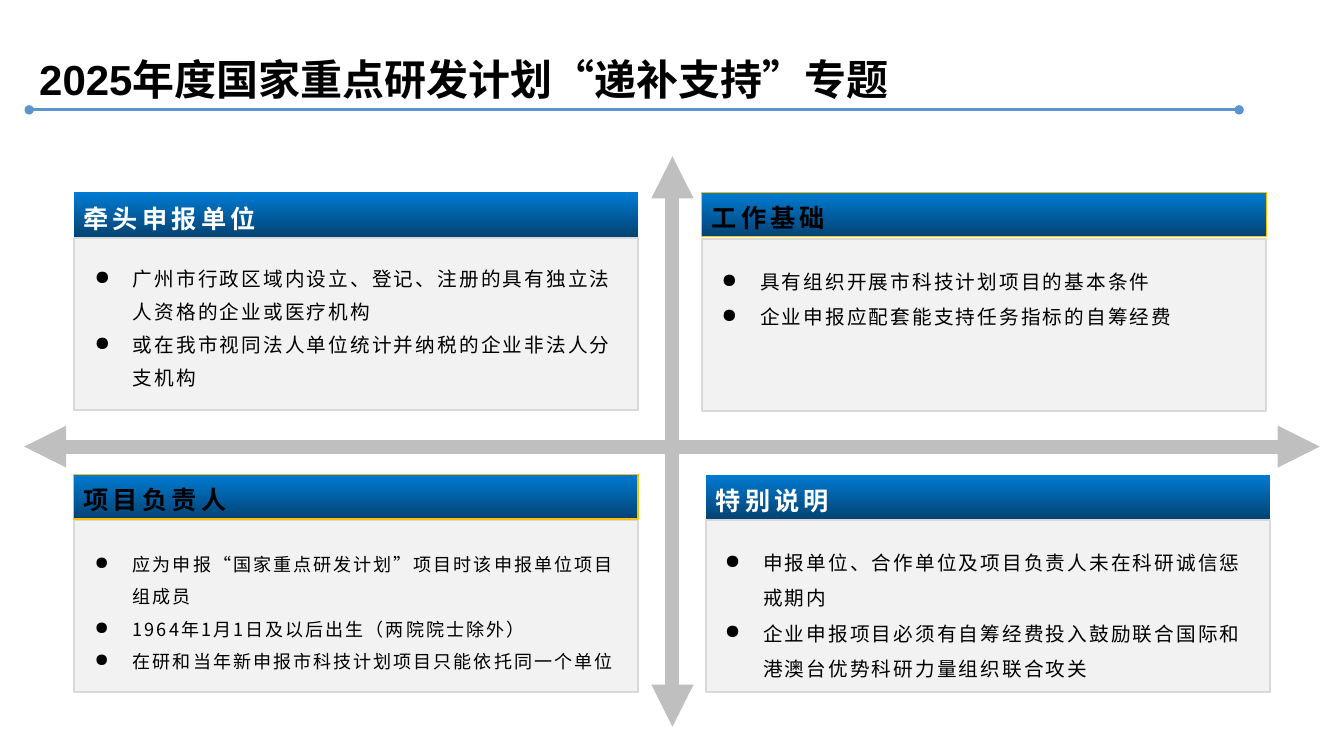
from dataclasses import dataclass

from lxml import etree
from pptx import Presentation
from pptx.dml.color import RGBColor
from pptx.enum.shapes import MSO_CONNECTOR, MSO_SHAPE
from pptx.enum.text import MSO_ANCHOR, MSO_AUTO_SIZE, PP_ALIGN
from pptx.oxml.ns import qn
from pptx.util import Inches, Pt

STRAIGHT = MSO_CONNECTOR.STRAIGHT
RECT = MSO_SHAPE.RECTANGLE
TOP, MIDDLE = MSO_ANCHOR.TOP, MSO_ANCHOR.MIDDLE
LEFT = PP_ALIGN.LEFT
GROW = MSO_AUTO_SIZE.SHAPE_TO_FIT_TEXT

SANS = "Noto Sans CJK SC"
BLACK, WHITE = "000000", "FFFFFF"
GOLD, BLUE, GREY = "FFC000", "5B94CE", "BFBFBF"
PANEL_FILL, PANEL_LINE = "F2F2F2", "D9D9D9"
GRADIENT = ("007BD3", "034373")
PANEL_W, PANEL_H, HEADER_H = 5.6, 1.71, 0.44
INDENT = 0.38


@dataclass
class Line:
    start: tuple[float, float]
    end: tuple[float, float]
    color: str
    width: float
    ends: str


@dataclass
class Quadrant:
    left: float
    header_top: float
    panel_top: float
    title: str
    outlined: bool
    body: tuple[float, float, float, float]
    size: float
    spacing: float
    items: list[str]


LINES = [
    Line((0.29, 1.09), (12.29, 1.09), BLUE, 2.25, "oval"),
    Line((0.24, 4.43), (13.09, 4.43), GREY, 10, "triangle"),
    Line((6.67, 1.55), (6.67, 7.21), GREY, 10, "triangle"),
]

QUADRANTS = [
    Quadrant(0.73, 1.91, 2.36, "牵头申报单位", False, (0.84, 2.51, 5.5, 1.42), 14, 1.4, [
        "广州市行政区域内设立、登记、注册的具有独立法人资格的企业或医疗机构",
        "或在我市视同法人单位统计并纳税的企业非法人分支机构",
    ]),
    Quadrant(6.96, 1.91, 2.37, "工作基础", True, (7.06, 2.51, 5.51, 1.42), 14, 1.5, [
        "具有组织开展市科技计划项目的基本条件",
        "企业申报应配套能支持任务指标的自筹经费",
    ]),
    Quadrant(0.73, 4.71, 5.16, "项目负责人", True, (0.84, 5.33, 5.5, 1.69), 12.9, 1.5, [
        "应为申报“国家重点研发计划”项目时该申报单位项目组成员",
        "1964年1月1日及以后出生（两院院士除外）",
        "在研和当年新申报市科技计划项目只能依托同一个单位",
    ]),
    Quadrant(7, 4.71, 5.16, "特别说明", False, (7.09, 5.3, 5.47, 1.58), 14, 1.5, [
        "申报单位、合作单位及项目负责人未在科研诚信惩戒期内",
        "企业申报项目必须有自筹经费投入鼓励联合国际和港澳台优势科研力量组织联合攻关",
    ]),
]


def rgb(value: str) -> RGBColor:
    return RGBColor.from_string(value)


def add_run(p, text: str, size: float, color: str, bold: bool = False,
            spacing: float = 0, latin: str = SANS) -> None:
    r = p.add_run()
    r.text = text
    r.font.size = Pt(size)
    r.font.bold = bold
    r.font.color.rgb = rgb(color)
    r.font.name = latin
    rPr = r.font._element
    etree.SubElement(rPr, qn("a:ea")).set("typeface", SANS)
    if spacing:
        rPr.set("spc", str(round(spacing * 100)))


def add_line(slide, line: Line) -> None:
    ends = [Inches(v) for v in (*line.start, *line.end)]
    cxn = slide.shapes.add_connector(STRAIGHT, *ends)
    cxn.line.color.rgb = rgb(line.color)
    cxn.line.width = Pt(line.width)
    ln = cxn.line._get_or_add_ln()
    for tag in ("a:headEnd", "a:tailEnd"):
        etree.SubElement(ln, qn(tag)).set("type", line.ends)
    etree.SubElement(cxn._element.spPr, qn("a:effectLst"))


def add_rect(slide, left: float, top: float, height: float):
    sp = slide.shapes.add_shape(RECT, Inches(left), Inches(top), Inches(PANEL_W), Inches(height))
    sp.shadow.inherit = False
    return sp


def add_text_box(slide, box: tuple[float, float, float, float]):
    tf = slide.shapes.add_textbox(*[Inches(v) for v in box]).text_frame
    tf.word_wrap = True
    return tf


def add_panel(slide, q: Quadrant) -> None:
    sp = add_rect(slide, q.left, q.panel_top, PANEL_H)
    sp.fill.solid()
    sp.fill.fore_color.rgb = rgb(PANEL_FILL)
    sp.line.color.rgb = rgb(PANEL_LINE)
    sp.line.width = Pt(1.5)


def add_header(slide, q: Quadrant) -> None:
    sp = add_rect(slide, q.left, q.header_top, HEADER_H)
    sp.fill.gradient()
    sp.fill.gradient_angle = 270
    for stop, position, color in zip(sp.fill.gradient_stops, (0, 1), GRADIENT):
        stop.position = position
        stop.color.rgb = rgb(color)
    if q.outlined:
        sp.line.color.rgb = rgb(GOLD)
        sp.line.width = Pt(1)
    else:
        sp.line.fill.background()
    tf = sp.text_frame
    tf.vertical_anchor = MIDDLE if q.outlined else TOP
    p = tf.paragraphs[0]
    p.alignment = LEFT
    p.line_spacing = 1.2
    add_run(p, q.title, 18, BLACK if q.outlined else WHITE, True, 3)


def add_body(slide, q: Quadrant) -> None:
    tf = add_text_box(slide, q.body)
    for i, item in enumerate(q.items):
        p = tf.add_paragraph() if i else tf.paragraphs[0]
        p.line_spacing = q.spacing
        pPr = p._p.get_or_add_pPr()
        pPr.set("marL", str(Inches(INDENT)))
        pPr.set("indent", str(-Inches(INDENT)))
        etree.SubElement(pPr, qn("a:buChar")).set("char", "●")
        add_run(p, item, q.size, BLACK, spacing=1.5)


def add_title(slide) -> None:
    tf = add_text_box(slide, (0.29, 0.23, 10.69, 0.86))
    tf.auto_size = GROW
    p = tf.paragraphs[0]
    p.line_spacing = 1.5
    add_run(p, "2025年度国家重点研发计划“递补支持”专题", 30, BLACK, True, latin="Arial")


def main() -> None:
    prs = Presentation()
    prs.slide_width, prs.slide_height = Inches(13.33), Inches(7.5)
    slide = prs.slides.add_slide(prs.slide_layouts[6])
    add_title(slide)
    for line in LINES:
        add_line(slide, line)
    for draw in (add_panel, add_header, add_body):
        for q in QUADRANTS:
            draw(slide, q)
    prs.save("out.pptx")


if __name__ == "__main__":
    main()
